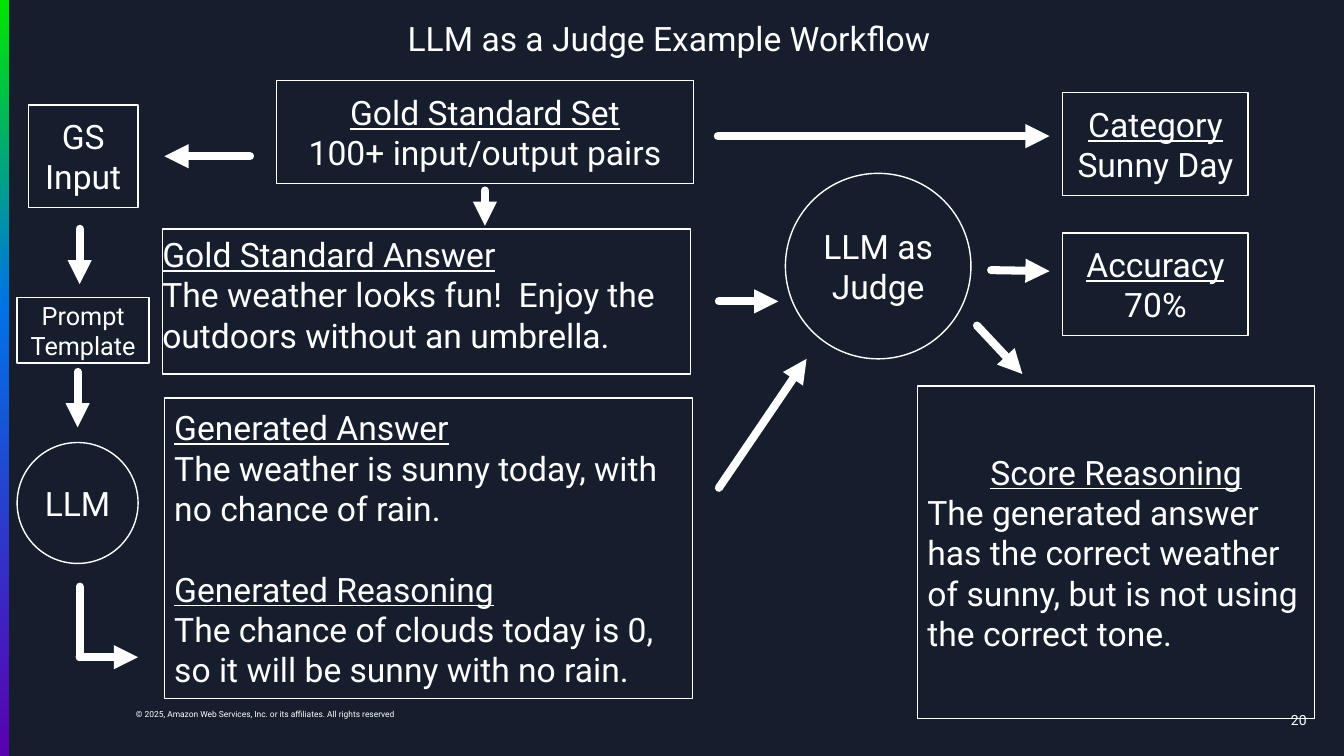
from pptx import Presentation
from pptx.dml.color import RGBColor
from pptx.enum.shapes import MSO_CONNECTOR, MSO_SHAPE
from pptx.enum.text import MSO_ANCHOR as ANCHOR, MSO_AUTO_SIZE as AUTO_SIZE, PP_ALIGN as ALIGN
from pptx.oxml import parse_xml
from pptx.oxml.ns import nsdecls, qn
from pptx.util import Pt

PX = 9144  # EMU, 100 px to the inch
FONT = "Roboto"
COLORS = {"night": "161E2D", "white": "FFFFFF",
          "green": "00E500", "blue": "0073E5", "violet": "5900B2"}
WHITE = RGBColor.from_string(COLORS["white"])
HEADINGS = {"Gold Standard Set", "Gold Standard Answer", "Generated Answer",
            "Generated Reasoning", "Category", "Accuracy", "Score Reasoning"}


def write(shape, lines, size=24, align=ALIGN.CENTER, anchor=ANCHOR.MIDDLE,
          insets=(10, 5, 10, 5), wrap=True, spacing=None):
    """Fill a shape with one paragraph per line, underlining the headings."""
    frame = shape.text_frame
    frame.text = "\n".join(lines)
    frame.auto_size = AUTO_SIZE.NONE
    frame.word_wrap = wrap
    frame.vertical_anchor = anchor
    frame.margin_left, frame.margin_top, frame.margin_right, frame.margin_bottom = (
        inset * PX for inset in insets)
    for paragraph in frame.paragraphs:
        if shape.is_placeholder:
            properties = paragraph._p.get_or_add_pPr()
            properties.set("marL", "0")
            properties.set("indent", "0")
            properties.append(parse_xml(f"<a:buNone {nsdecls('a')}/>"))
        paragraph.alignment = align
        paragraph.line_spacing = spacing
        paragraph.space_before = Pt(0)
        for run in paragraph.runs:
            run.font.name = FONT
            run.font.size = Pt(size)
            run.font.color.rgb = WHITE
            run.font.underline = run.text in HEADINGS


def place(shape, left, top, width, height):
    shape.left, shape.top, shape.width, shape.height = (
        length * PX for length in (left, top, width, height))


presentation = Presentation()
presentation.slide_width = 1333 * PX
presentation.slide_height = 750 * PX
slide = presentation.slides.add_slide(presentation.slide_layouts[1])
slide.background.fill.solid()
slide.background.fill.fore_color.rgb = RGBColor.from_string(COLORS["night"])

# Gradient bar on the left edge
bar = slide.shapes.add_shape(MSO_SHAPE.RECTANGLE, 0, 0, 9 * PX, 750 * PX)
bar.shadow.inherit = False
bar.line.fill.background()
bar.fill.background()
stops = "".join(
    f'<a:gs pos="{position * 1000}"><a:srgbClr val="{COLORS[name]}"/></a:gs>'
    for position, name in ((0, "green"), (40, "blue"), (100, "violet")))
bar_properties = bar._element.spPr
bar_properties.replace(bar_properties.find(qn("a:noFill")), parse_xml(
    f'<a:gradFill {nsdecls("a")}><a:gsLst>{stops}</a:gsLst>'
    '<a:lin ang="5400000" scaled="0"/></a:gradFill>'))

# Footer
copyright_line = slide.shapes.add_textbox(125 * PX, 699 * PX, 285 * PX, 20 * PX)
write(copyright_line,
      ["© 2025, Amazon Web Services, Inc. or its affiliates. All rights reserved"],
      size=6, align=ALIGN.LEFT, anchor=ANCHOR.TOP, wrap=False)
page_number = slide.shapes.add_textbox(996 * PX, 694 * PX, 300 * PX, 40 * PX)
write(page_number, ["20"], size=10, align=ALIGN.RIGHT, insets=(0, 0, 0, 0))

# Title and gold standard answer
title = slide.shapes.title
place(title, 24, 12, 1279, 70)
write(title, ["LLM as a Judge Example Workflow"], anchor=ANCHOR.TOP,
      insets=(0, 10, 0, 5), spacing=0.9)
gold_answer = slide.placeholders[1]
place(gold_answer, 161, 227, 524, 144)
gold_answer.line.color.rgb = WHITE
gold_answer.line.width = Pt(1)
write(gold_answer,
      ["Gold Standard Answer",
       "The weather looks fun!  Enjoy the outdoors without an umbrella."],
      align=ALIGN.LEFT, anchor=ANCHOR.TOP, insets=(0, 5, 0, 5))

# Workflow steps: preset, (left, top, width, height), lines, format
BOX, CIRCLE = MSO_SHAPE.RECTANGLE, MSO_SHAPE.OVAL
steps = [
    (BOX, (274, 80, 414, 102), ["Gold Standard Set", "100+ input/output pairs"], {}),
    (BOX, (28, 104, 109, 102), ["GS", "Input"], {}),
    (BOX, (17, 295, 131, 65), ["Prompt", "Template"], {"size": 18}),
    (CIRCLE, (17, 439, 120, 120), ["LLM"], {}),
    (BOX, (163, 395, 524, 298),
     ["Generated Answer", "The weather is sunny today, with no chance of rain.",
      "Generated Reasoning",
      "The chance of clouds today is 0, so it will be sunny with no rain."],
     {"align": ALIGN.LEFT}),
    (CIRCLE, (779, 172, 184, 184), ["LLM as Judge"], {}),
    (BOX, (1054, 92, 184, 102), ["Category", "Sunny Day"], {}),
    (BOX, (1054, 231, 184, 102), ["Accuracy", "70%"], {}),
    (BOX, (910, 383, 394, 330),
     ["Score Reasoning",
      "The generated answer has the correct weather of sunny, "
      "but is not using the correct tone."],
     {"align": ALIGN.LEFT}),
]
for preset, bounds, lines, text_format in steps:
    step = slide.shapes.add_shape(preset, *(length * PX for length in bounds))
    step.shadow.inherit = False
    step.fill.background()
    step.line.color.rgb = WHITE
    step.line.width = Pt(1)
    write(step, lines, **text_format)
    for paragraph in step.text_frame.paragraphs:
        if paragraph.text == "Score Reasoning":
            paragraph.alignment = ALIGN.CENTER
        elif paragraph.text == "Generated Reasoning":
            paragraph.space_before = Pt(29)

# Arrows: from x, from y, to x, to y, has a head
arrows = [
    (248, 155, 163, 155, True),
    (481, 189, 481, 224, True),
    (79, 227, 79, 282, True),
    (77, 369, 77, 424, True),
    (79, 582, 79, 652, False),
    (79, 652, 137, 652, True),
    (713, 299, 772, 299, True),
    (713, 484, 800, 356, True),
    (712, 135, 1041, 135, True),
    (983, 268, 1041, 269, True),
    (969, 323, 1014, 371, True),
]
for *ends, has_head in arrows:
    arrow = slide.shapes.add_connector(MSO_CONNECTOR.STRAIGHT, *(end * PX for end in ends))
    arrow.line.color.rgb = WHITE
    arrow.line.width = Pt(5.75)
    outline = arrow.line._get_or_add_ln()
    outline.set("cap", "rnd")
    if has_head:
        outline.append(parse_xml(f'<a:tailEnd {nsdecls("a")} type="triangle"/>'))
    arrow._element.spPr.append(parse_xml(f"<a:effectLst {nsdecls('a')}/>"))

presentation.save("out.pptx")
